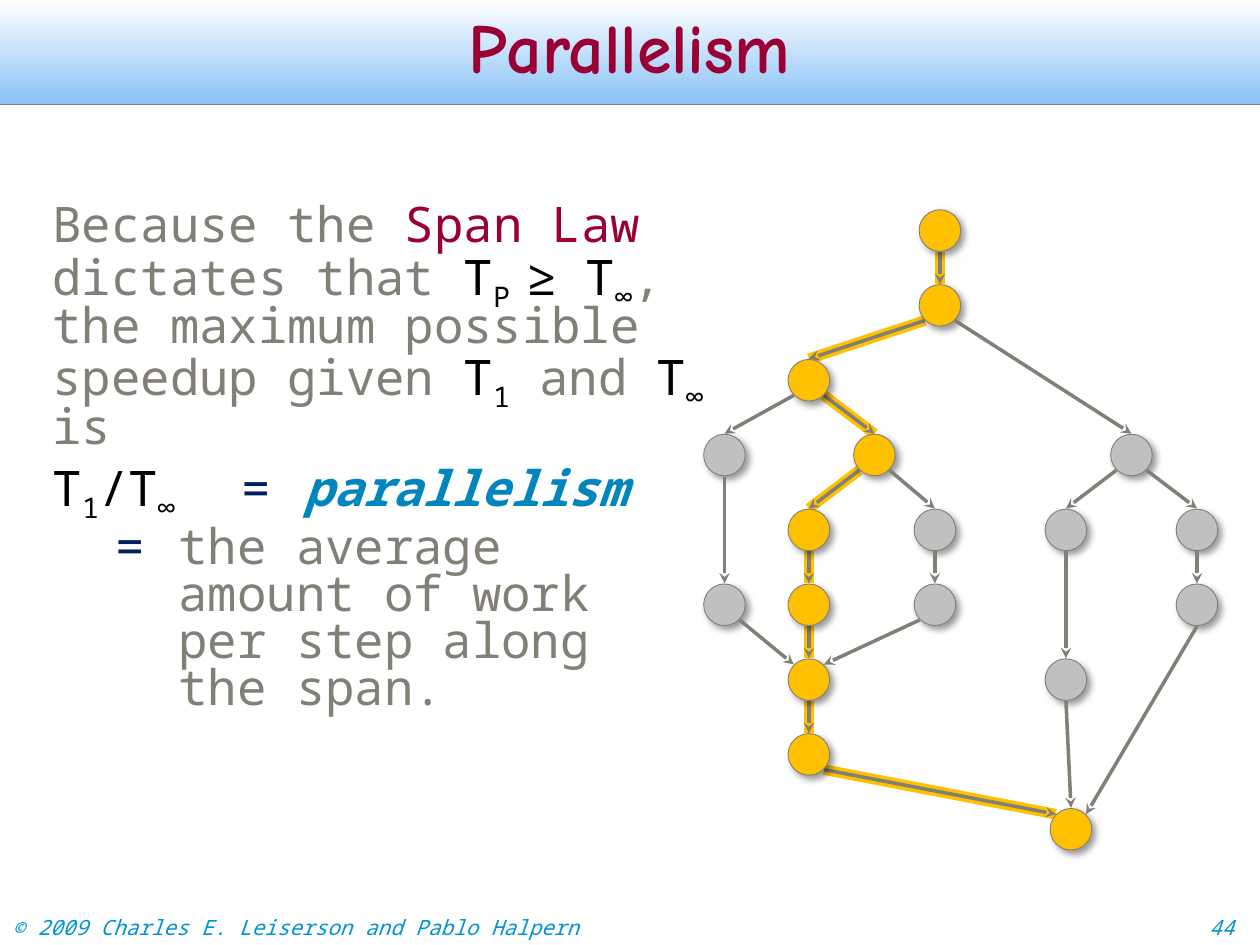
from lxml import etree
from pptx import Presentation, util as u
from pptx.dml.color import RGBColor
from pptx.enum import shapes, text
from pptx.oxml.ns import qn

GRAY = RGBColor(0x82, 0x7F, 0x77)
SILVER = RGBColor(0xC0, 0xC0, 0xC0)
GOLD = RGBColor(0xFF, 0xC0, 0x00)
WINE = RGBColor(0x99, 0x00, 0x33)
BLACK = RGBColor(0x00, 0x00, 0x00)
NAVY = RGBColor(0x00, 0x20, 0x60)
BLUE = RGBColor(0x00, 0x85, 0xBC)
CYAN = RGBColor(0x00, 0x93, 0xD0)
SKY = RGBColor(0x89, 0xC2, 0xF6)
WHITE = RGBColor(0xFF, 0xFF, 0xFF)
MONO = "Noto Sans Mono"

SIZE, TOP, STEP = 0.33, 1.83, 0.594
SIDES = {"t": (0, -0.17), "b": (0, 0.17), "tl": (-0.12, -0.12),
         "tr": (0.12, -0.12), "bl": (-0.12, 0.12), "br": (0.12, 0.12)}
SPAN = {"root": (7.46, 0), "fork": (7.46, 1), "left": (6.42, 2),
        "mid": (6.94, 3), "s1": (6.42, 4), "s2": (6.42, 5),
        "join": (6.42, 6), "s3": (6.42, 7), "end": (8.5, 8)}
REST = {"far1": (5.75, 3), "far2": (5.75, 5), "in1": (7.42, 4),
        "in2": (7.42, 5), "right": (8.98, 3), "r1": (8.46, 4),
        "r2": (8.46, 6), "out1": (9.5, 4), "out2": (9.5, 5)}
NODES = {**SPAN, **REST}
MAIN = [("root", "b", "fork", "t"), ("fork", "bl", "left", "t"),
        ("left", "br", "mid", "t"), ("mid", "bl", "s1", "t"),
        ("s1", "b", "s2", "t"), ("s2", "b", "join", "t"),
        ("join", "b", "s3", "t"), ("s3", "br", "end", "tl")]
SIDE = [("fork", "br", "right", "t"), ("left", "bl", "far1", "t"),
        ("far1", "b", "far2", "t"), ("mid", "br", "in1", "t"),
        ("far2", "br", "join", "tl"), ("right", "br", "out1", "t"),
        ("in2", "bl", "join", "tr"), ("in1", "b", "in2", "t"),
        ("right", "bl", "r1", "t"), ("r1", "b", "r2", "t"),
        ("out1", "b", "out2", "t"), ("out2", "b", "end", "tr"),
        ("r2", "b", "end", "t")]

SUB = {"base": -25000}
BODY = [
    [("Because the ", GRAY, {}), ("Span Law ", WINE, {}),
     ("dictates that ", GRAY, {}), ("T", BLACK, {}), ("P ", BLACK, SUB),
     ("≥ T", BLACK, {}), ("∞", BLACK, SUB),
     (", the maximum possible speedup given ", GRAY, {}),
     ("T", BLACK, {}), ("1", BLACK, SUB), (" and ", GRAY, {}),
     ("T", BLACK, {}), ("∞", BLACK, SUB), (" is", GRAY, {})],
    [("T", BLACK, {}), ("1", BLACK, SUB), ("/T", BLACK, {}),
     ("∞ \t", BLACK, SUB), ("=\t", NAVY, {}),
     ("parallelism", BLUE, {"bold": True, "italic": True})],
    [("\t", CYAN, {}), ("=\t", NAVY, {}),
     ("the average \n\t\tamount of work \n\t\tper step along \n\t\tthe span.",
      GRAY, {})],
]


def add(root, tag, **attrs):
    return etree.SubElement(root, qn(tag), attrs)


def style(obj, vals):
    for key, val in vals.items():
        setattr(obj, key, val)


def box(slide, area, anchor):
    frame = slide.shapes.add_textbox(*map(u.Inches, area)).text_frame
    style(frame, {"word_wrap": True, "vertical_anchor": anchor})
    return frame


def write(para, words, color, size, font=MONO, base=None, **vals):
    for num, line in enumerate(words.split("\n")):
        if num:
            para.add_line_break()
        run = para.add_run()
        run.text = line
        style(run.font, {"name": font, "size": u.Pt(size), **vals})
        run.font.color.rgb = color
        if base:
            run.font._element.set("baseline", str(base))


def tabs(para, stops):
    props = para._p.get_or_add_pPr()
    props.set("defTabSz", str(u.Inches(0.5)))
    group = add(props, "a:tabLst")
    for pos, kind in stops:
        add(group, "a:tab", pos=str(u.Inches(pos)), algn=kind)


def link(slide, start, end, color, width, arrow=False):
    line = slide.shapes.add_connector(
        shapes.MSO_CONNECTOR.STRAIGHT, *map(u.Inches, (*start, *end)))
    line.line.color.rgb = color
    line.line.width = u.Pt(width)
    if arrow:
        add(line.line._get_or_add_ln(), "a:tailEnd", type="stealth")
    add(line._element.spPr, "a:effectLst")


def spot(name, side=None):
    x, row = NODES[name]
    dx, dy = SIDES.get(side, (0, 0))
    return x + dx, TOP + STEP * row + dy


def edges(slide, pairs, color, width, arrow):
    for src, leave, dest, enter in pairs:
        link(slide, spot(src, leave), spot(dest, enter), color, width, arrow)


def node(slide, name):
    x, y = spot(name)
    dot = slide.shapes.add_shape(
        shapes.MSO_SHAPE.OVAL,
        *map(u.Inches, (x - SIZE / 2, y - SIZE / 2, SIZE, SIZE)))
    dot.fill.solid()
    dot.fill.fore_color.rgb = GOLD if name in SPAN else SILVER
    dot.line.color.rgb = GRAY
    dot.line.width = u.Pt(0.5)
    dot.shadow.inherit = False
    glow = add(dot._element.spPr.find(qn("a:effectLst")), "a:outerShdw",
               blurRad=str(u.Pt(4)), dist=str(u.Pt(3)), dir="2700000",
               algn="tl", rotWithShape="0")
    add(add(glow, "a:srgbClr", val="000000"), "a:alpha", val="40000")


def band(slide):
    bar = slide.shapes.add_shape(
        shapes.MSO_SHAPE.RECTANGLE, *map(u.Inches, (0, 0, 10, 0.83)))
    bar.shadow.inherit = False
    bar.line.fill.background()
    bar.fill.gradient()
    bar.fill.gradient_angle = 90
    for stop, pos, color in zip(bar.fill.gradient_stops, (0, 1), (SKY, WHITE)):
        stop.position = pos
        stop.color.rgb = color


def main():
    deck = Presentation()
    style(deck, {"slide_width": u.Inches(10), "slide_height": u.Inches(7.5)})
    slide = deck.slides.add_slide(deck.slide_layouts[6])
    band(slide)

    foot = box(slide, (0, 7.2, 10, 0.31), text.MSO_ANCHOR.BOTTOM).paragraphs[0]
    tabs(foot, [(4.87, "ctr"), (9.5, "l")])
    write(foot, "© 2009 Charles E. Leiserson and Pablo Halpern\t\t44",
          CYAN, 12, italic=True)
    link(slide, (0, 0.83), (10, 0.83), GRAY, 0.75)

    head = box(slide, (0.08, 0.08, 9.83, 0.67),
               text.MSO_ANCHOR.MIDDLE).paragraphs[0]
    style(head, {"alignment": text.PP_ALIGN.CENTER, "line_spacing": 0.86})
    write(head, "Parallelism", WINE, 40, "Comic Neue", bold=True)

    body = box(slide, (0.32, 1.58, 5.93, 3.84), text.MSO_ANCHOR.TOP)
    for num, parts in enumerate(BODY):
        para = body.add_paragraph() if num else body.paragraphs[0]
        style(para, {"line_spacing": 0.8, "space_before": u.Pt(5.6)})
        tabs(para, [(0.5 * k, "l") for k in range(1, 5)])
        for words, color, vals in parts:
            write(para, words, color, 28, **vals)

    edges(slide, MAIN, GOLD, 6, False)
    edges(slide, MAIN, GRAY, 2, True)
    for name in NODES:
        node(slide, name)
    edges(slide, SIDE, GRAY, 2, True)
    deck.save("out.pptx")


if __name__ == "__main__":
    main()
